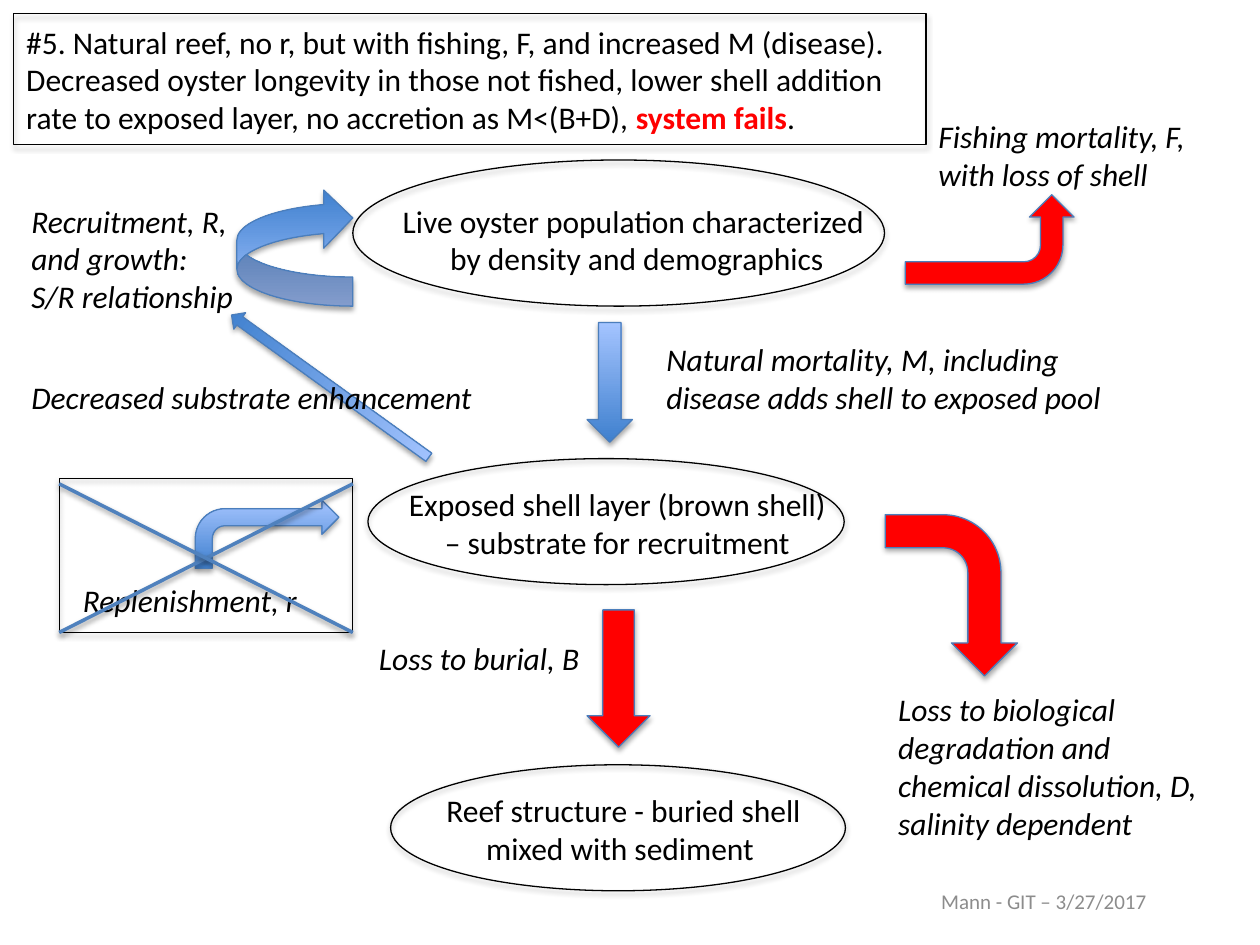
from dataclasses import dataclass

from lxml import etree
from pptx import Presentation
from pptx import util as u
from pptx.dml.color import RGBColor
from pptx.enum import shapes, text
from pptx.oxml.ns import qn


@dataclass(frozen=True)
class Theme:
    font: str = "Calibri"
    body: int = 18
    small: int = 12
    ink: str = "000000"
    loss: str = "FF0000"
    muted: str = "8C8C8C"
    edge: str = "4B7EBC"
    cross: str = "4F81BD"
    gain: tuple = ("3F80CE", "A4C4FF")


class ReefSlide:
    """Draws the elements of a reef flow diagram on one slide."""

    def __init__(self, page, theme):
        self.page = page
        self.theme = theme

    def frame(self, at):
        return [u.Inches(length) for length in at]

    def color(self, value):
        return RGBColor.from_string(value)

    def shadow(self, item, opacity, distance):
        properties = item._element.spPr
        effects = etree.SubElement(properties, qn("a:effectLst"))
        outer = etree.SubElement(
            effects, qn("a:outerShdw"), blurRad=str(u.Pt(3.1)),
            dist=str(u.Pt(distance)), dir="5400000", rotWithShape="0")
        tint = etree.SubElement(outer, qn("a:srgbClr"), val=self.theme.ink)
        etree.SubElement(tint, qn("a:alpha"), val=str(opacity * 1000))

    def text(self, at, lines, italic=False, wrap=False, centred=False,
             size=None, color=None, grow=True):
        box = self.page.shapes.add_textbox(*self.frame(at))
        body = box.text_frame
        body.word_wrap = wrap
        if grow:
            body.auto_size = text.MSO_AUTO_SIZE.SHAPE_TO_FIT_TEXT
        else:
            body.vertical_anchor = text.MSO_ANCHOR.MIDDLE
        for index, line in enumerate(lines):
            paragraph = body.paragraphs[0] if index == 0 else body.add_paragraph()
            paragraph.add_run().text = line
            font = paragraph.font
            font.name = self.theme.font
            font.size = u.Pt(size or self.theme.body)
            font.italic = italic
            font.color.rgb = self.color(color or self.theme.ink)
            if centred:
                paragraph.alignment = text.PP_ALIGN.CENTER
        return body

    def shape(self, kind, at, edge):
        item = self.page.shapes.add_shape(kind, *self.frame(at))
        item.line.color.rgb = self.color(edge)
        item.line.width = u.Pt(0.75)
        return item

    def outline(self, kind, at):
        item = self.shape(kind, at, self.theme.ink)
        item.fill.background()
        self.shadow(item, 35, 1.8)

    def arrow(self, kind, at, loss=False, turn=0, flip=None):
        item = self.shape(kind, at, self.theme.edge)
        item.rotation = turn
        if flip:
            item._element.spPr.xfrm.set(flip, "1")
        if loss:
            item.fill.solid()
            item.fill.fore_color.rgb = self.color(self.theme.loss)
        else:
            item.fill.gradient()
            item.fill.gradient_angle = 90
            for stop, tint in zip(item.fill.gradient_stops, self.theme.gain):
                stop.color.rgb = self.color(tint)
        self.shadow(item, 35, 1.8)

    def line(self, start, end):
        item = self.page.shapes.add_connector(
            shapes.MSO_CONNECTOR.STRAIGHT, *self.frame(start + end))
        item.line.color.rgb = self.color(self.theme.cross)
        item.line.width = u.Pt(2)
        self.shadow(item, 38, 1.6)


def main():
    deck = Presentation()
    deck.slide_width, deck.slide_height = u.Inches(10), u.Inches(7.5)
    theme = Theme()
    reef = ReefSlide(deck.slides.add_slide(deck.slide_layouts[6]), theme)
    kinds = shapes.MSO_SHAPE

    pools = [
        ((3.09, 1.55, 3.93, 0.71),
         ["Live oyster population characterized ", "by density and demographics"]),
        ((3.1, 3.8, 3.6, 0.71),
         ["Exposed shell layer (brown shell)", " – substrate for recruitment "]),
        ((3.42, 6.23, 3.06, 0.71),
         ["Reef structure - buried shell ", "mixed with sediment "]),
    ]
    for at, lines in pools:
        reef.text(at, lines, centred=True)

    flows = [
        ((0.15, 1.55, 2.06, 1.01), True,
         ["Recruitment, R,", "and growth:", "S/R relationship"]),
        ((7.35, 0.88, 2.36, 0.71), True,
         ["Fishing mortality, F, with loss of shell"]),
        ((5.19, 2.65, 4.08, 0.71), True,
         ["Natural mortality, M, including disease adds shell to exposed pool"]),
        ((2.91, 5.02, 1.87, 0.4), False, ["Loss to burial, B"]),
        ((7.03, 5.43, 2.67, 1.31), False,
         ["Loss to biological", "degradation and",
          "chemical dissolution, D,", "salinity dependent"]),
        ((0.56, 4.56, 1.99, 0.4), False, ["Replenishment, r"]),
    ]
    for at, wrap, lines in flows:
        reef.text(at, lines, italic=True, wrap=wrap)

    reef.arrow(kinds.BENT_ARROW, (6.91, 4.2, 1.28, 1.05), loss=True, turn=90)
    reef.arrow(kinds.BENT_ARROW, (1.55, 3.97, 1.14, 0.54))
    reef.arrow(kinds.BENT_ARROW, (7.5, 1.23, 0.71, 1.34), loss=True, turn=90,
               flip="flipH")
    reef.arrow(kinds.DOWN_ARROW, (4.66, 4.84, 0.5, 1.09), loss=True)
    reef.arrow(kinds.DOWN_ARROW, (4.66, 2.56, 0.36, 0.95))
    reef.arrow(kinds.CURVED_RIGHT_ARROW, (1.88, 1.5, 0.92, 0.93), flip="flipV")
    reef.arrow(kinds.DOWN_ARROW, (2.54, 2.1, 0.16, 1.93), turn=125.8)

    for at in ((2.92, 3.64, 3.78, 1), (2.8, 1.27, 4.22, 1.16), (3.1, 6.07, 3.61, 1)):
        reef.outline(kinds.OVAL, at)

    heading = reef.text((0.11, 0.13, 7.16, 1.01), [
        "#5. Natural reef, no r, but with fishing, F, and increased M (disease).",
        "Decreased oyster longevity in those not fished, lower shell addition",
        "rate to exposed layer, no accretion as M<(B+D), "])
    verdict = heading.paragraphs[-1].add_run()
    verdict.text = "system fails"
    verdict.font.bold = True
    verdict.font.color.rgb = reef.color(theme.loss)
    heading.paragraphs[-1].add_run().text = "."
    for span in heading.paragraphs[-1].runs[::2]:
        span.font.color.rgb = reef.color(theme.ink)

    reef.outline(kinds.RECTANGLE, (0.11, 0.11, 7.24, 1.04))
    reef.outline(kinds.RECTANGLE, (0.47, 3.8, 2.33, 1.22))
    reef.line((0.47, 5.02), (2.8, 3.84))
    reef.line((0.47, 3.84), (2.8, 5.02))

    reef.text((0.15, 2.95, 3.81, 0.4), ["Decreased substrate enhancement"], italic=True)
    reef.text((6.7, 6.95, 3.17, 0.4), ["Mann - GIT – 3/27/2017"], wrap=True,
              centred=True, size=theme.small, color=theme.muted, grow=False)
    deck.save("out.pptx")


if __name__ == "__main__":
    main()
